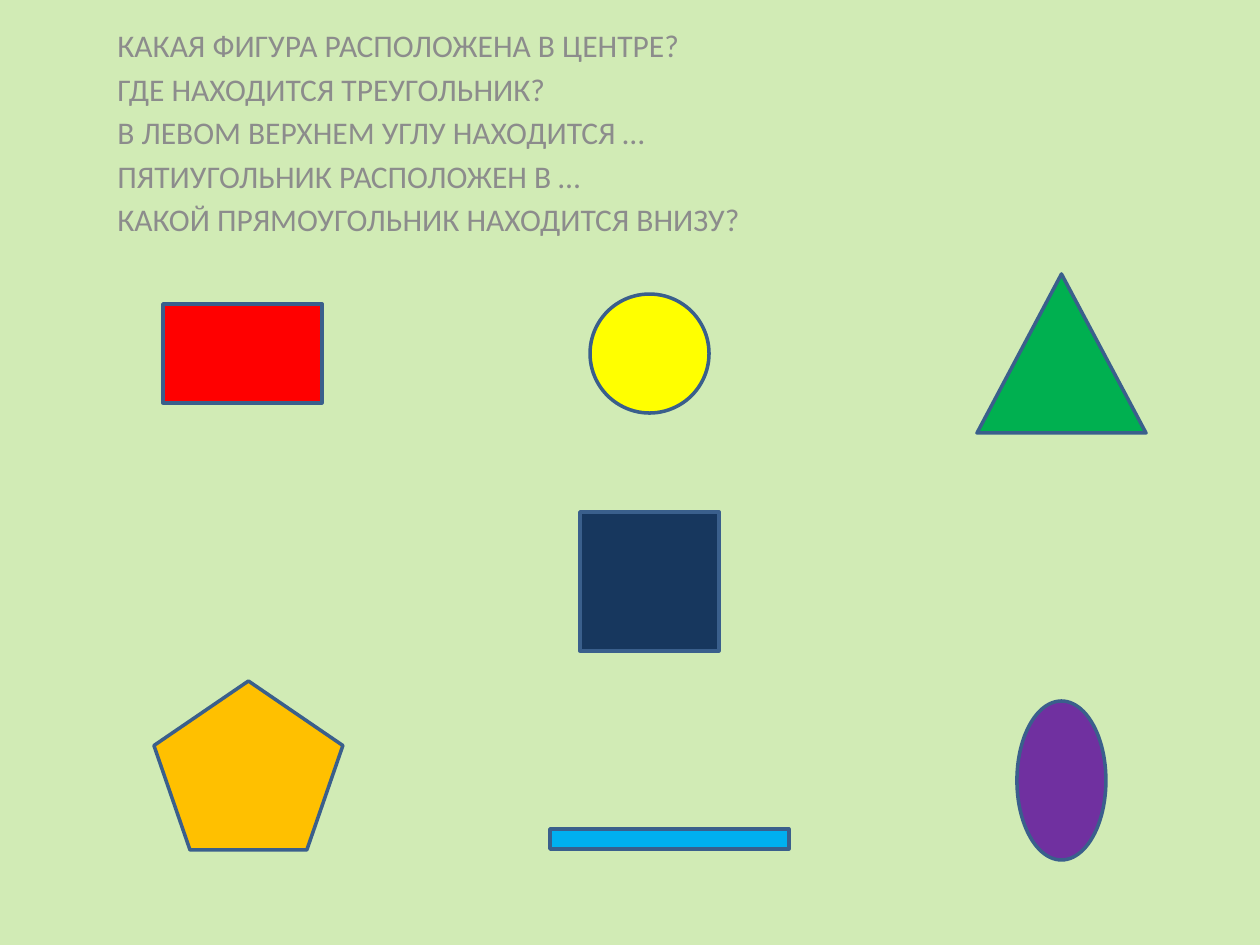
"""Build a slide of coloured shapes with questions about where they are."""
from pptx import Presentation
from pptx.dml.color import RGBColor
from pptx.enum.shapes import MSO_SHAPE
from pptx.enum.text import MSO_ANCHOR, PP_ALIGN
from pptx.util import Emu, Pt

RECT = MSO_SHAPE.RECTANGLE
OVAL = MSO_SHAPE.OVAL
PENTAGON = MSO_SHAPE.REGULAR_PENTAGON
TRIANGLE = MSO_SHAPE.ISOSCELES_TRIANGLE
BOTTOM = MSO_ANCHOR.BOTTOM
LEFT = PP_ALIGN.LEFT

SCALE = 914400 / 126
COLORS = {
    "back": "D1EBB5", "text": "8C8C8C", "line": "3A5F8C",
    "navy": "17375E", "red": "FF0000", "blue": "00B0F0",
    "yellow": "FFFF00", "purple": "7030A0", "orange": "FFC000",
    "green": "00B050",
}
QUESTIONS = [
    "КАКАЯ ФИГУРА РАСПОЛОЖЕНА В ЦЕНТРЕ?",
    "ГДЕ НАХОДИТСЯ ТРЕУГОЛЬНИК?",
    "В ЛЕВОМ ВЕРХНЕМ УГЛУ НАХОДИТСЯ …",
    "ПЯТИУГОЛЬНИК РАСПОЛОЖЕН В …",
    "КАКОЙ ПРЯМОУГОЛЬНИК НАХОДИТСЯ ВНИЗУ?",
]
FIGURES = [
    (RECT, "navy", (580, 512, 139, 139)),
    (RECT, "red", (163, 304, 159, 99)),
    (RECT, "blue", (550, 829, 239, 20)),
    (OVAL, "yellow", (590, 294, 119, 119)),
    (OVAL, "purple", (1017, 701, 89, 159)),
    (PENTAGON, "orange", (154, 681, 189, 169)),
    (TRIANGLE, "green", (977, 274, 169, 159)),
]


def px(size):
    return Emu(round(size * SCALE))


def color(name):
    return RGBColor.from_string(COLORS[name])


def paint(slide):
    fill = slide.background.fill
    fill.solid()
    fill.fore_color.rgb = color("back")


def add_text(slide, lines, box):
    frame = slide.shapes.add_textbox(*map(px, box)).text_frame
    frame.word_wrap = True
    frame.vertical_anchor = BOTTOM
    frame.text = "\n".join(lines)
    for para in frame.paragraphs:
        para.alignment = LEFT
        para.space_before = Pt(3.2)
        font = para.runs[0].font
        font.name = "Calibri"
        font.size = Pt(18)
        font.color.rgb = color("text")


def add_figure(slide, kind, name, box):
    shape = slide.shapes.add_shape(kind, *map(px, box))
    shape.shadow.inherit = False
    shape.fill.solid()
    shape.fill.fore_color.rgb = color(name)
    shape.line.color.rgb = color("line")
    shape.line.width = Pt(2)


def main():
    deck = Presentation()
    deck.slide_width, deck.slide_height = px(1260), px(945)
    slide = deck.slides.add_slide(deck.slide_layouts[6])
    paint(slide)
    add_text(slide, QUESTIONS, (105, 0, 1071, 244))
    for kind, name, box in FIGURES:
        add_figure(slide, kind, name, box)
    deck.save("out.pptx")


if __name__ == "__main__":
    main()
